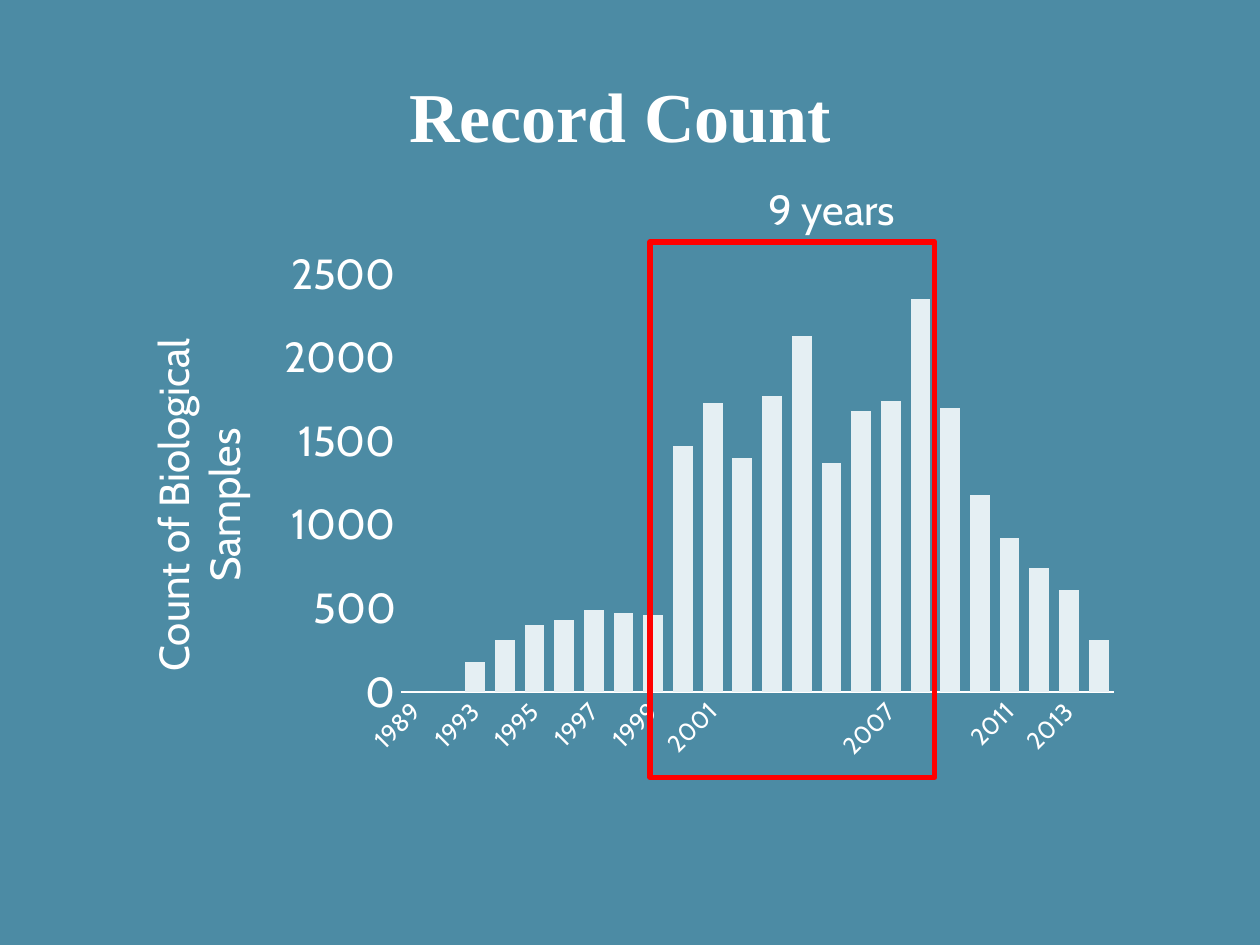
from pptx import Presentation
from pptx.chart.data import CategoryChartData
from pptx.dml.color import RGBColor
from pptx.enum import chart as ch, shapes, text
from pptx.oxml import parse_xml
from pptx.oxml.ns import nsdecls
from pptx.util import Inches, Pt

# Content
TITLE = "Record Count"
AXIS_TITLE = "Count of Biological Samples"
SPAN_LABEL = "9 years"
YEARS = ["1989"] + [str(year) for year in range(1992, 2015)]
COUNTS = [0, 0, 180, 310, 400, 430, 490, 470, 460, 1470, 1730, 1400,
          1770, 2130, 1370, 1680, 1740, 2350, 1700, 1180, 920, 740, 610, 310]
PLOT = {"x": 0.28, "y": 0.07, "w": 0.7, "h": 0.78}  # shares of the chart

BACKGROUND = RGBColor(0x4C, 0x8B, 0xA4)
WHITE = RGBColor(0xFF, 0xFF, 0xFF)
BAR = RGBColor(0xE5, 0xEF, 0xF3)
RED = RGBColor(0xFF, 0x00, 0x00)
FONT = "Cabin"


def style(font, size, name=FONT, bold=False):
    font.name, font.size, font.bold = name, Pt(size), bold
    font.color.rgb = WHITE


def box(left, top, width, height):
    return [Inches(v) for v in (left, top, width, height)]


prs = Presentation()
prs.slide_width, prs.slide_height = Inches(10), Inches(7.5)
s = prs.slides.add_slide(prs.slide_layouts[5])
s.background.fill.solid()
s.background.fill.fore_color.rgb = BACKGROUND

# Title
title = s.shapes.title
title.left, title.top, title.width, title.height = box(0.42, 0.49, 9, 0.83)
tf = title.text_frame
tf.text = TITLE
tf.vertical_anchor = text.MSO_ANCHOR.MIDDLE
p = tf.paragraphs[0]
p.alignment = text.PP_ALIGN.CENTER
style(p.runs[0].font, 40, "Times New Roman", True)

# Column chart
data = CategoryChartData()
data.categories = YEARS
data.add_series("Series 1", COUNTS)
chart = s.shapes.add_chart(ch.XL_CHART_TYPE.COLUMN_CLUSTERED,
                           *box(0.92, 1.88, 8.08, 4.25), data).chart
chart.has_legend = chart.has_title = False
style(chart.font, 10)
plot = chart.plots[0]
plot.gap_width, plot.overlap, plot.vary_by_categories = 50, -28, False
fill = plot.series[0].format.fill
fill.solid()
fill.fore_color.rgb = BAR

# Axes
years, counts = chart.category_axis, chart.value_axis
for axis, size in ((years, 14), (counts, 24)):
    axis.has_major_gridlines = False
    axis.major_tick_mark = axis.minor_tick_mark = ch.XL_TICK_MARK.NONE
    style(axis.tick_labels.font, size)
years.format.line.color.rgb = WHITE
years.format.line.width = Pt(0.75)
counts.format.line.fill.background()
counts.minimum_scale, counts.maximum_scale, counts.major_unit = 0, 2500, 500
tf = counts.axis_title.text_frame
tf.text = AXIS_TITLE
style(tf.paragraphs[0].runs[0].font, 24)

# Slanted label on every second year, fixed plot area
cat_ax = years._element
cat_ax.txPr.bodyPr.set("rot", "-2700000")
cat_ax.find("{*}noMultiLvlLbl").addprevious(
    parse_xml(f'<c:tickLblSkip {nsdecls("c")} val="2"/>'))
plot_area = cat_ax.getparent()
for old in plot_area.findall("{*}layout"):
    plot_area.remove(old)
modes = "".join(f'<c:{k}Mode val="edge"/>' for k in "xy")
sizes = "".join(f'<c:{k} val="{v}"/>' for k, v in PLOT.items())
plot_area.insert(0, parse_xml(
    f'<c:layout {nsdecls("c")}><c:manualLayout><c:layoutTarget val="inner"/>'
    f'{modes}{sizes}</c:manualLayout></c:layout>'))

# Frame around the nine years
frame = s.shapes.add_shape(shapes.MSO_SHAPE.RECTANGLE,
                           *box(5.16, 1.92, 2.26, 4.25))
frame.shadow.inherit = False
frame.fill.background()
frame.line.color.rgb = RED
frame.line.width = Pt(3)

# Frame label
tf = s.shapes.add_textbox(*box(6, 1.41, 1.21, 0.5)).text_frame
tf.word_wrap = False
tf.auto_size = text.MSO_AUTO_SIZE.SHAPE_TO_FIT_TEXT
tf.text = SPAN_LABEL
style(tf.paragraphs[0].runs[0].font, 24)

prs.save("out.pptx")
